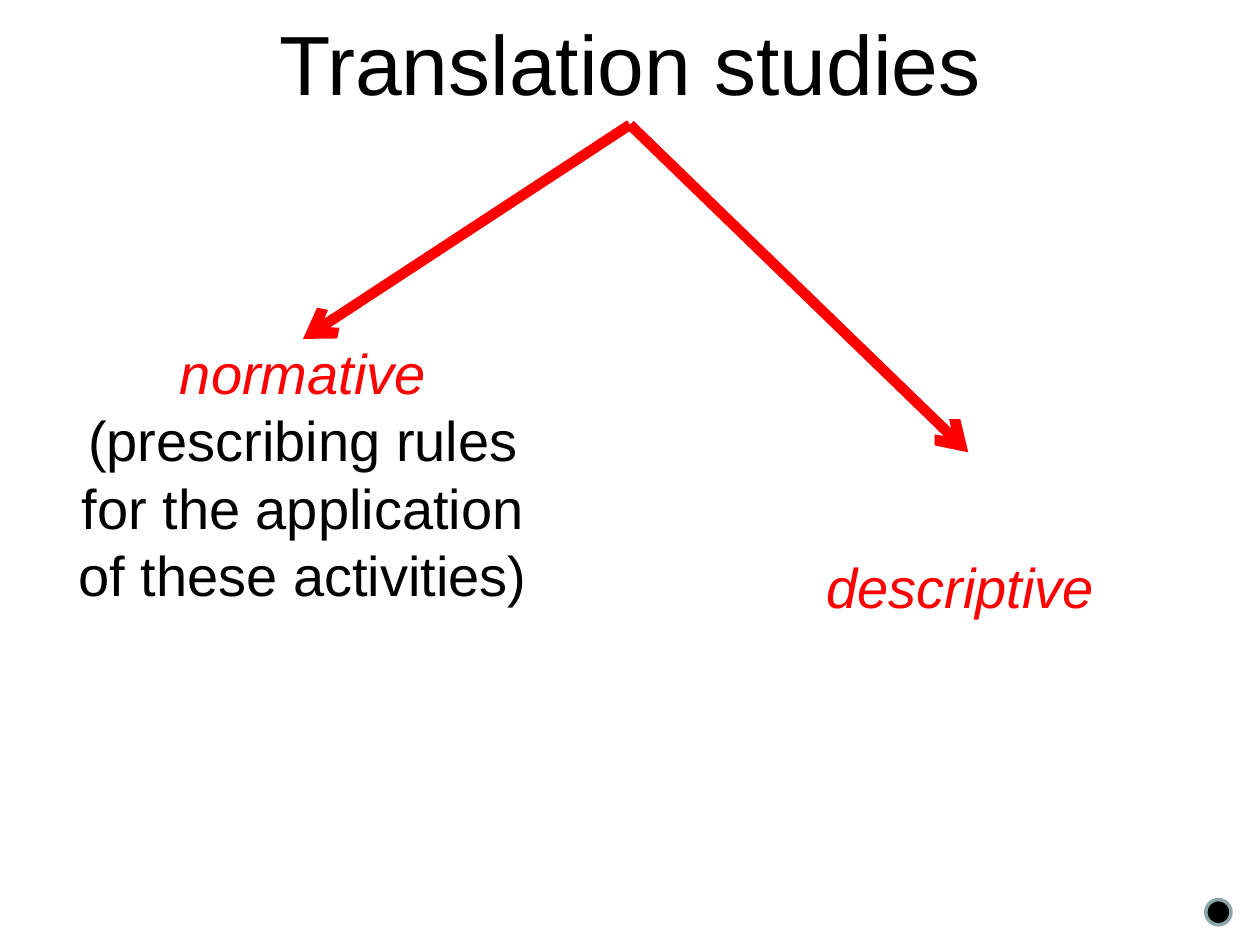
from pptx import Presentation
from pptx.dml.color import RGBColor
from pptx.enum.shapes import MSO_CONNECTOR, MSO_SHAPE
from pptx.enum.text import MSO_ANCHOR, PP_ALIGN
from pptx.oxml.ns import qn
from pptx.util import Inches, Pt
from lxml import etree

WHITE = RGBColor(0xFF, 0xFF, 0xFF)
BLACK = RGBColor(0x00, 0x00, 0x00)
RED = RGBColor(0xFF, 0x00, 0x00)
GREY = RGBColor(0x8A, 0xA6, 0xA8)
RECT, ROUNDED, OVAL = MSO_SHAPE.RECTANGLE, MSO_SHAPE.ROUNDED_RECTANGLE, MSO_SHAPE.OVAL
STRAIGHT = MSO_CONNECTOR.STRAIGHT
MIDDLE = MSO_ANCHOR.MIDDLE
CENTER = PP_ALIGN.CENTER

prs = Presentation()
prs.slide_width, prs.slide_height = Inches(10), Inches(7.5)
s = prs.slides.add_slide(prs.slide_layouts[6])


def add_shape(kind, box, fill, line):
    sp = s.shapes.add_shape(kind, *[Inches(v) for v in box])
    sp.shadow.inherit = False
    sp.fill.solid()
    sp.fill.fore_color.rgb = fill
    sp.line.color.rgb = line
    sp.line.width = Pt(2)
    return sp


def add_text(sp, runs, size):
    """Centre one paragraph of (text, colour, italic) runs in the shape."""
    tf = sp.text_frame
    tf.word_wrap = True
    tf.vertical_anchor = MIDDLE
    p = tf.paragraphs[0]
    p.alignment = CENTER
    for text, colour, italic in runs:
        r = p.add_run()
        r.text = text
        r.font.name = "Arial"
        r.font.size = Pt(size)
        r.font.italic = italic
        r.font.color.rgb = colour


title = add_shape(RECT, (0, 0, 10, 0.99), WHITE, WHITE)
add_text(title, [("Translation studies", BLACK, False)], 48)

branches = [
    ((0.34, 2.69, 4.13, 2.13),
     [("normative ", RED, True),
      ("(prescribing rules for the application of these activities)", BLACK, False)]),
    ((5.63, 3.59, 4.11, 2.13), [("descriptive ", RED, True)]),
]
for box, runs in branches:
    branch = add_shape(ROUNDED, box, WHITE, WHITE)
    add_text(branch, runs, 32)

    arrow = s.shapes.add_connector(STRAIGHT, 0, 0, 0, 0)
    arrow.begin_connect(title, 2)
    arrow.end_connect(branch, 0)
    arrow.line.color.rgb = RED
    arrow.line.width = Pt(6)
    etree.SubElement(arrow.line._get_or_add_ln(), qn("a:tailEnd"), type="arrow")
    etree.SubElement(arrow._element.spPr, qn("a:effectLst"))

add_shape(OVAL, (9.57, 7.14, 0.2, 0.2), BLACK, GREY)

prs.save("out.pptx")
